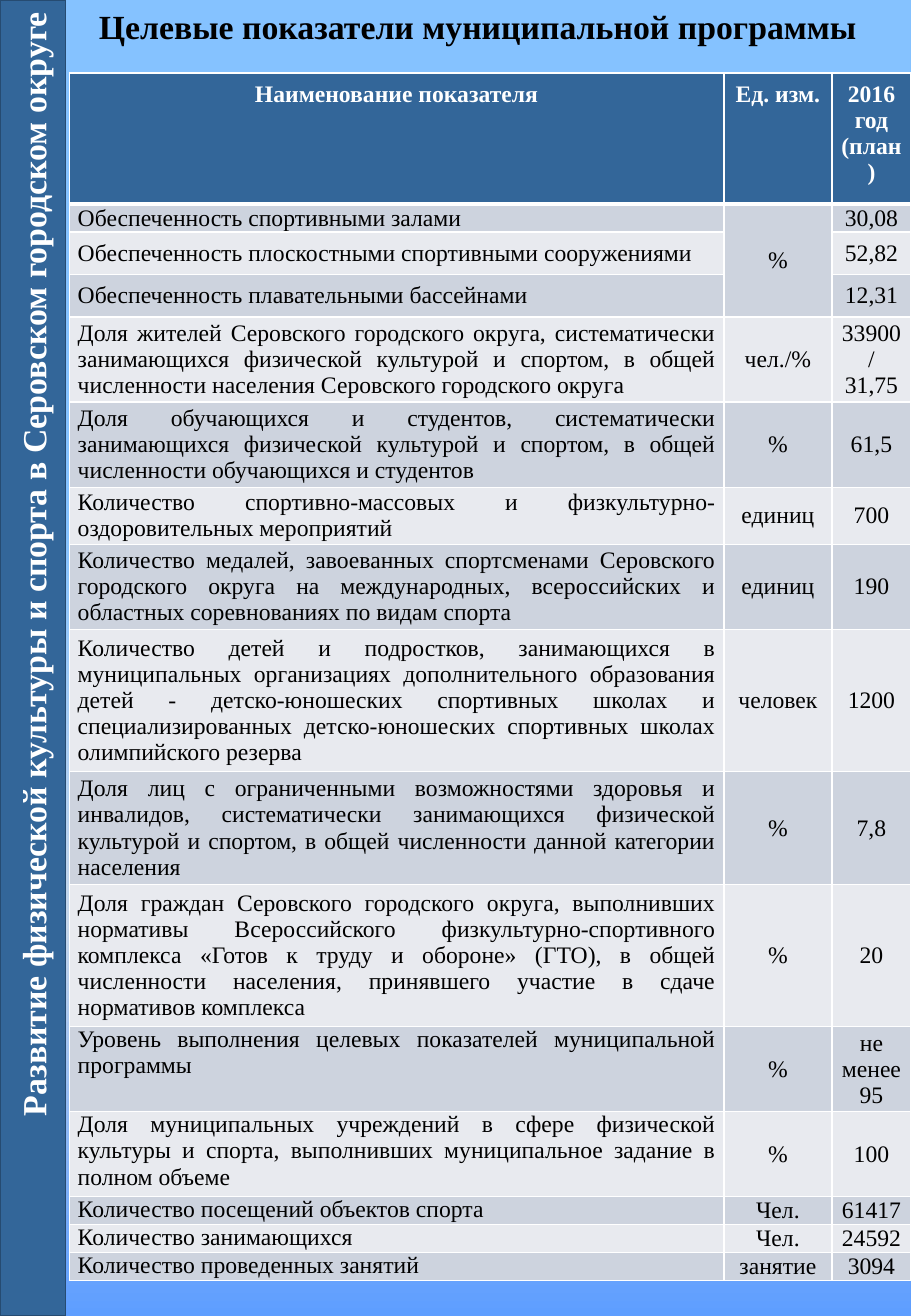
from dataclasses import dataclass

from lxml import etree
from pptx import Presentation
from pptx.dml.color import RGBColor
from pptx.enum.shapes import MSO_SHAPE
from pptx.enum.text import MSO_ANCHOR, MSO_AUTO_SIZE, PP_ALIGN
from pptx.oxml.ns import qn
from pptx.util import Inches, Pt

RECT = MSO_SHAPE.RECTANGLE
TOP, MIDDLE = MSO_ANCHOR.TOP, MSO_ANCHOR.MIDDLE
CENTER, JUSTIFY, RIGHT = PP_ALIGN.CENTER, PP_ALIGN.JUSTIFY, PP_ALIGN.RIGHT
NO_FIT = MSO_AUTO_SIZE.NONE


@dataclass(frozen=True)
class Theme:
    font: str = "Times New Roman"
    heading: int = 20
    body: int = 14
    text: str = "000000"
    white: str = "FFFFFF"
    blue: str = "336699"
    outline: str = "264B71"
    bands: tuple = ("CDD3DE", "E8EAEF")
    sky: tuple = ((0, "85C2FF"), (40, "85C2FF"), (70, "C4D6EB"), (100, "5E9EFF"))


@dataclass(frozen=True)
class Indicator:
    name: str
    unit: str
    plan: str
    height: float
    anchor: MSO_ANCHOR = MIDDLE


THEME = Theme()
WIDTH, HEIGHT = 7.5, 10.83
SIDEBAR = 0.54
HEADER_HEIGHT = 1.08
COLUMNS = (5.39, 0.89, 0.65)
HEADERS = ("Наименование показателя", "Ед. изм.", "2016 год\n(план)")
INDICATORS = (
    Indicator("Обеспеченность спортивными залами", "%", "30,08", 0.23),
    Indicator("Обеспеченность плоскостными спортивными сооружениями", "", "52,82", 0.35),
    Indicator("Обеспеченность плавательными бассейнами", "", "12,31", 0.35),
    Indicator("Доля жителей Серовского городского округа, систематически занимающихся "
              "физической культурой и спортом, в общей численности населения "
              "Серовского городского округа", "чел./%", "33900/ 31,75", 0.7),
    Indicator("Доля обучающихся и студентов, систематически занимающихся физической "
              "культурой и спортом, в общей численности обучающихся и студентов",
              "%", "61,5", 0.7),
    Indicator("Количество спортивно-массовых и физкультурно-оздоровительных мероприятий",
              "единиц", "700", 0.47),
    Indicator("Количество медалей, завоеванных спортсменами Серовского городского округа "
              "на международных, всероссийских и областных соревнованиях по видам спорта",
              "единиц", "190", 0.7),
    Indicator("Количество детей и подростков, занимающихся в муниципальных организациях "
              "дополнительного образования детей - детско-юношеских спортивных школах и "
              "специализированных детско-юношеских спортивных школах олимпийского резерва",
              "человек", "1200", 1.17),
    Indicator("Доля лиц с ограниченными возможностями здоровья и инвалидов, "
              "систематически занимающихся физической культурой и спортом, в общей "
              "численности данной категории населения", "%", "7,8", 0.93),
    Indicator("Доля граждан Серовского городского округа, выполнивших нормативы "
              "Всероссийского физкультурно-спортивного комплекса «Готов к труду и обороне» "
              "(ГТО), в общей численности населения, принявшего участие в сдаче "
              "нормативов комплекса", "%", "20", 1.17),
    Indicator("Уровень выполнения целевых показателей муниципальной программы",
              "%", "не менее 95", 0.7, TOP),
    Indicator("Доля муниципальных учреждений в сфере физической культуры и спорта, "
              "выполнивших муниципальное задание в полном объеме", "%", "100", 0.7, TOP),
    Indicator("Количество посещений объектов спорта", "Чел.", "61417", 0.23, TOP),
    Indicator("Количество занимающихся", "Чел.", "24592", 0.23, TOP),
    Indicator("Количество проведенных занятий", "занятие", "3094", 0.23, TOP),
)


def rgb(color: str) -> RGBColor:
    return RGBColor.from_string(color)


def write(tf, text: str, size: int, color: str, bold: bool, align: PP_ALIGN) -> None:
    tf.text = text
    for p in tf.paragraphs:
        p.alignment = align
        p.font.name = THEME.font
        p.font.size = Pt(size)
        p.font.bold = bold
        p.font.color.rgb = rgb(color)


def paint_background(s) -> None:
    fill = s.background.fill
    fill.gradient()
    fill.gradient_angle = 270
    stops = s.element.find(".//" + qn("a:gsLst"))
    for stop in list(stops):
        stops.remove(stop)
    for percent, color in THEME.sky:
        stop = etree.SubElement(stops, qn("a:gs"), pos=str(percent * 1000))
        etree.SubElement(stop, qn("a:srgbClr"), val=color)


def add_title(s) -> None:
    sp = s.shapes.title
    sp.left, sp.top, sp.width, sp.height = map(Inches, (0.67, 0, 6.53, 0.44))
    tf = sp.text_frame
    tf.auto_size = NO_FIT
    tf.vertical_anchor = TOP
    write(tf, "Целевые показатели муниципальной программы",
          THEME.heading, THEME.text, True, CENTER)


def add_sidebar(s) -> None:
    sp = s.shapes.add_shape(RECT, Inches((SIDEBAR - HEIGHT) / 2),
                            Inches((HEIGHT - SIDEBAR) / 2),
                            Inches(HEIGHT), Inches(SIDEBAR))
    sp.rotation = 270
    sp.shadow.inherit = False
    sp.fill.solid()
    sp.fill.fore_color.rgb = rgb(THEME.blue)
    sp.line.color.rgb = rgb(THEME.outline)
    sp.line.width = Pt(1)
    tf = sp.text_frame
    tf.word_wrap = True
    tf.vertical_anchor = MIDDLE
    write(tf, "Развитие физической культуры и спорта в Серовском городском округе",
          THEME.heading, THEME.white, True, RIGHT)


def style_cell(cell, fill: str, anchor: MSO_ANCHOR, inset: float,
               top: int = 1, bottom: int = 1) -> None:
    cell.margin_left = cell.margin_right = Inches(0.07)
    cell.margin_top = cell.margin_bottom = Inches(inset)
    cell.vertical_anchor = anchor
    props = cell._tc.get_or_add_tcPr()
    for side, width in (("L", 1), ("R", 1), ("T", top), ("B", bottom)):
        line = etree.SubElement(props, qn(f"a:ln{side}"), w=str(Pt(width)))
        solid = etree.SubElement(line, qn("a:solidFill"))
        etree.SubElement(solid, qn("a:srgbClr"), val=THEME.white)
    cell.fill.solid()
    cell.fill.fore_color.rgb = rgb(fill)


def add_indicators(s) -> None:
    heights = (HEADER_HEIGHT, *(item.height for item in INDICATORS))
    table = s.shapes.add_table(len(heights), len(COLUMNS), Inches(0.57), Inches(0.6),
                               Inches(sum(COLUMNS)), Inches(sum(heights))).table
    for column, width in zip(table.columns, COLUMNS):
        column.width = Inches(width)
    for row, height in zip(table.rows, heights):
        row.height = Inches(height)
    for col, text in enumerate(HEADERS):
        cell = table.cell(0, col)
        style_cell(cell, THEME.blue, TOP, 0.07, bottom=3)
        write(cell.text_frame, text, THEME.body, THEME.white, True, CENTER)
    for row, item in enumerate(INDICATORS, 1):
        band = THEME.bands[(row - 1) % 2]
        for col, text in enumerate((item.name, item.unit, item.plan)):
            cell = table.cell(row, col)
            style_cell(cell, band, MIDDLE if col else item.anchor, 0,
                       top=3 if row == 1 else 1)
            write(cell.text_frame, text, THEME.body, THEME.text, False,
                  CENTER if col else JUSTIFY)
    table.cell(1, 1).merge(table.cell(3, 1))


def main() -> None:
    prs = Presentation()
    prs.slide_width, prs.slide_height = Inches(WIDTH), Inches(HEIGHT)
    s = prs.slides.add_slide(prs.slide_layouts[5])
    paint_background(s)
    add_title(s)
    add_indicators(s)
    add_sidebar(s)
    prs.save("out.pptx")


if __name__ == "__main__":
    main()
